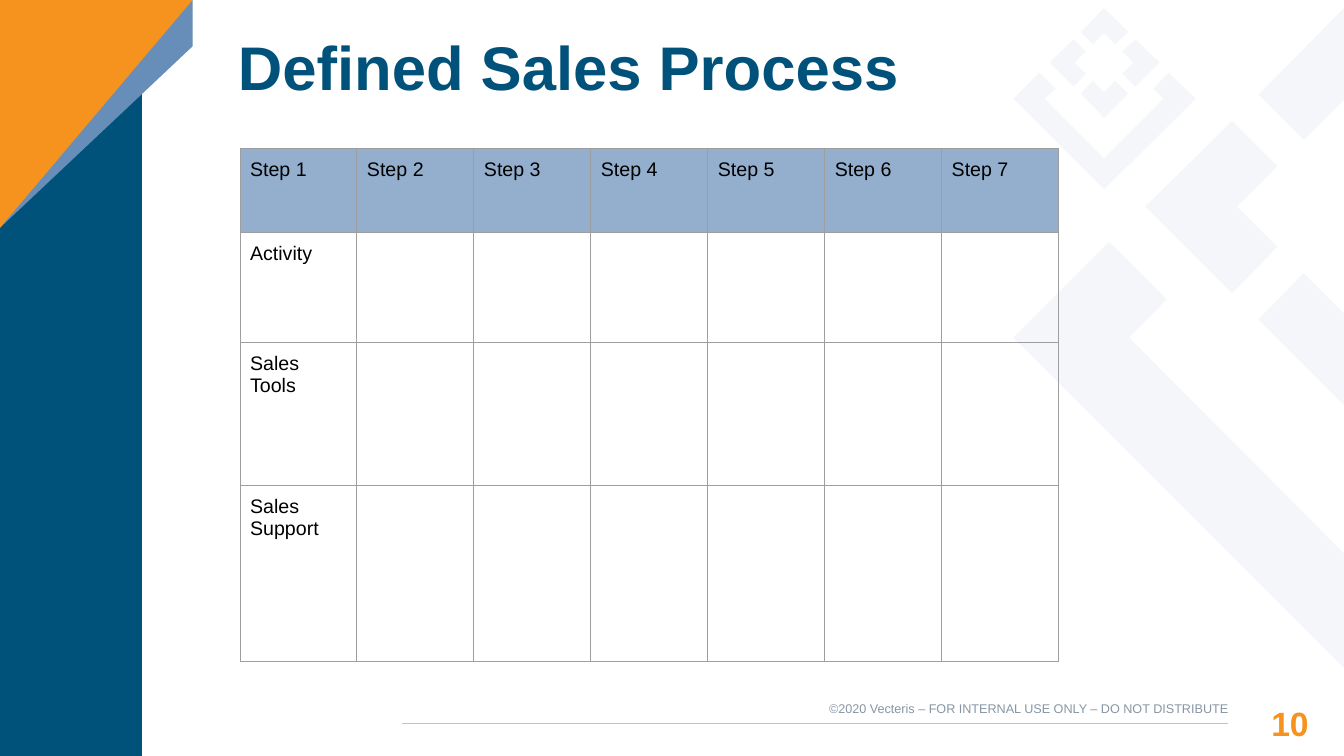
from dataclasses import dataclass

from lxml.etree import SubElement
from pptx import Presentation
from pptx.dml.color import RGBColor as RGB
from pptx.enum.shapes import MSO_CONNECTOR as CONNECTOR
from pptx.enum.text import MSO_ANCHOR as ANCHOR, PP_ALIGN as ALIGN
from pptx.oxml.ns import qn
from pptx.util import Inches, Pt

# Content
TITLE = "Defined Sales Process"
STEPS = [f"Step {n}" for n in range(1, 8)]
ROW_LABELS = ["Activity", "Sales Tools", "Sales Support"]
FOOTER = "©2020 Vecteris – FOR INTERNAL USE ONLY – DO NOT DISTRIBUTE"
PAGE = "10"

# Table measures in inches
TABLE_LEFT, TABLE_TOP, COL_WIDTH = 2.38, 1.47, 1.16
ROW_HEIGHTS = [0.84, 1.09, 1.42, 1.74]


@dataclass(frozen=True)
class Theme:
    font: str = "Arial"
    navy: RGB = RGB(0x00, 0x52, 0x7B)
    blue: RGB = RGB(0x66, 0x8E, 0xB8)
    orange: RGB = RGB(0xF6, 0x92, 0x1E)
    pattern: RGB = RGB(0xE9, 0xEE, 0xF4)
    header: RGB = RGB(0x93, 0xAF, 0xCD)
    rule: RGB = RGB(0xB3, 0xC6, 0xDC)
    grey: RGB = RGB(0x87, 0x96, 0xA4)
    black: RGB = RGB(0, 0, 0)
    border: str = "9E9E9E"
    title_size: int = 44
    page_size: int = 24
    table_size: int = 14
    footer_size: int = 9


T = Theme()

# Outlines as (x, y) corners in inches
PATTERN = [
    [(12.22, 1.2), (11.36, 2.05), (12.22, 2.91), (12.67, 2.45), (12.27, 2.05), (12.67, 1.65)],
    [(11, 2.4), (10.05, 3.35), (13.33, 6.63), (13.33, 5.49), (11.2, 3.35), (11.57, 2.97)],
    [(12.93, 2.71), (12.48, 3.17), (13.33, 4.02), (13.33, 3.11)],
    [(13.33, 0.08), (12.48, 0.94), (12.93, 1.39), (13.33, 0.99)],
    [(11.26, 0.39), (11.13, 0.51), (11.24, 0.62), (11.13, 0.73), (11.26, 0.86), (11.5, 0.62)],
    [(10.65, 0.39), (10.41, 0.62), (10.65, 0.86), (10.77, 0.73), (10.66, 0.62), (10.77, 0.51)],
    [(10.95, 0.08), (10.72, 0.32), (10.84, 0.44), (10.95, 0.33), (11.06, 0.44), (11.19, 0.32)],
    [(10.84, 0.8), (10.72, 0.93), (10.95, 1.17), (11.19, 0.93), (11.06, 0.8), (10.95, 0.92)],
    [(10.31, 0.72), (10.05, 0.98), (10.95, 1.88), (11.86, 0.98), (11.59, 0.72),
     (11.44, 0.88), (11.54, 0.98), (10.95, 1.57), (10.36, 0.98), (10.47, 0.88)],
]
SIDE_PANELS = [
    (T.navy, [(0, 0), (1.41, 0), (1.41, 7.5), (0, 7.5)]),
    (T.blue, [(0, 0), (1.91, 0), (1.91, 0.46), (0, 2.26)]),
    (T.orange, [(0, 0), (1.91, 0), (0, 2.26)]),
]


def add_outline(slide, corners, color, opacity=None):
    start, *rest = [(Inches(x), Inches(y)) for x, y in corners]
    builder = slide.shapes.build_freeform(*start, scale=1.0)
    builder.add_line_segments(rest, close=True)
    sp = builder.convert_to_shape()
    sp.shadow.inherit = False
    sp.fill.solid()
    sp.fill.fore_color.rgb = color
    sp.line.fill.background()
    if opacity:
        clr = sp._element.spPr.find(".//" + qn("a:srgbClr"))
        SubElement(clr, qn("a:alpha"), val=str(opacity * 1000))


def format_text(tf, size, color, bold=False, align=ALIGN.LEFT, spacing=1.0):
    p = tf.paragraphs[0]
    p.alignment, p.line_spacing = align, spacing
    for r in p.runs:
        r.font.name, r.font.size, r.font.bold = T.font, Pt(size), bold
        r.font.color.rgb = color


def set_margins(box, margin=0):
    box.margin_left = box.margin_right = Inches(margin)
    box.margin_top = box.margin_bottom = Inches(margin)


def add_label(slide, text, left, top, width, height, **style):
    tf = slide.shapes.add_textbox(*map(Inches, (left, top, width, height))).text_frame
    tf.word_wrap = True
    set_margins(tf)
    tf.text = text
    format_text(tf, align=ALIGN.RIGHT, **style)


def add_borders(cell):
    tc_pr = cell._tc.get_or_add_tcPr()
    for side in ("lnL", "lnR", "lnT", "lnB"):
        ln = SubElement(tc_pr, qn(f"a:{side}"), w=str(Pt(0.75)))
        SubElement(SubElement(ln, qn("a:solidFill")), qn("a:srgbClr"), val=T.border)


def add_steps_table(slide):
    rows = [STEPS] + [[label] + [""] * (len(STEPS) - 1) for label in ROW_LABELS]
    table = slide.shapes.add_table(
        len(rows), len(STEPS), Inches(TABLE_LEFT), Inches(TABLE_TOP),
        Inches(COL_WIDTH * len(STEPS)), Inches(sum(ROW_HEIGHTS))).table
    table.first_row = table.horz_banding = False
    for col in table.columns:
        col.width = Inches(COL_WIDTH)
    for i, (texts, height) in enumerate(zip(rows, ROW_HEIGHTS)):
        table.rows[i].height = Inches(height)
        for j, text in enumerate(texts):
            cell = table.cell(i, j)
            set_margins(cell, 0.1)
            add_borders(cell)
            if i == 0:
                cell.fill.solid()
                cell.fill.fore_color.rgb = T.header
            else:
                cell.fill.background()
            cell.text = text
            format_text(cell.text_frame, T.table_size, T.black)


def main():
    prs = Presentation()
    prs.slide_width, prs.slide_height = Inches(13.33), Inches(7.5)
    slide = prs.slides.add_slide(prs.slide_layouts[5])

    # Background pattern and side panels
    for corners in PATTERN:
        add_outline(slide, corners, T.pattern, opacity=49)
    for color, corners in SIDE_PANELS:
        add_outline(slide, corners, color)

    # Footer
    rule = slide.shapes.add_connector(
        CONNECTOR.STRAIGHT, Inches(3.99), Inches(7.18), Inches(12.18), Inches(7.18))
    rule.line.color.rgb, rule.line.width = T.rule, Pt(0.82)
    SubElement(rule._element.spPr, qn("a:effectLst"))
    add_label(slide, PAGE, 12.18, 6.9, 0.8, 0.38,
              size=T.page_size, color=T.orange, bold=True, spacing=1.19)
    add_label(slide, FOOTER, 7.92, 6.95, 4.26, 0.15, size=T.footer_size, color=T.grey)

    # Table
    add_steps_table(slide)

    # Title
    title = slide.shapes.title
    title.left, title.top = Inches(2.36), Inches(0.36)
    title.width, title.height = Inches(10.97), Inches(0.68)
    tf = title.text_frame
    set_margins(tf)
    tf.vertical_anchor = ANCHOR.MIDDLE
    tf.text = TITLE
    format_text(tf, T.title_size, T.navy, bold=True, spacing=0.9)

    prs.save("out.pptx")


if __name__ == "__main__":
    main()
